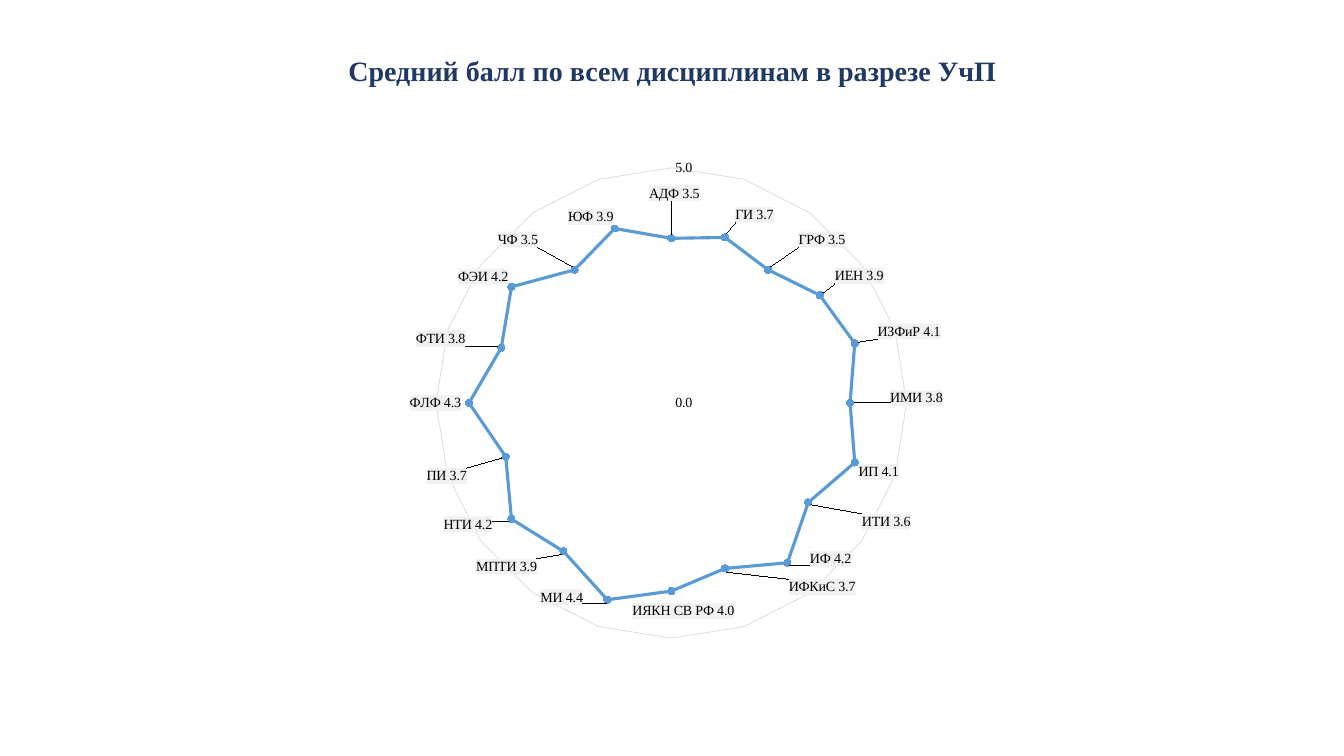
import copy
import pptx
import pptx.chart.data
import pptx.dml.color
import pptx.enum.chart
import pptx.enum.text
import pptx.oxml
import pptx.oxml.ns
import pptx.util
from pptx.util import Inches

TITLE = "Средний балл по всем дисциплинам в разрезе УчП"
FONT = "Times New Roman"
BLUE, NAVY, BLACK, GREY, PALE = "5B9BD5", "203864", "000000", "D9D9D9", "F2F2F2"

# unit, average mark, shift of its label in inches (None: left in place)
MARKS = [
    ("АДФ", 3.5, (0.03, -0.29)),
    ("ГИ", 3.7, (0.09, -0.11)),
    ("ГРФ", 3.5, (0.28, -0.19)),
    ("ИЕН", 3.9, (0.12, -0.09)),
    ("ИЗФиР", 4.1, (0.19, -0.03)),
    ("ИМИ", 3.8, (0.32, -0.05)),
    ("ИП", 4.1, None),
    ("ИТИ", 3.6, (0.5, 0.09)),
    ("ИФ", 4.2, (0.2, -0.15)),
    ("ИФКиС", 3.7, (0.62, 0.07)),
    ("ИЯКН СВ РФ", 4.0, (0.12, 0.04)),
    ("МИ", 4.4, (-0.23, -0.14)),
    ("МПТИ", 3.9, (-0.24, 0.04)),
    ("НТИ", 4.2, (-0.16, -0.05)),
    ("ПИ", 3.7, (-0.35, 0.1)),
    ("ФЛФ", 4.3, None),
    ("ФТИ", 3.8, (-0.32, 0)),
    ("ФЭИ", 4.2, None),
    ("ЧФ", 3.5, (-0.34, -0.19)),
    ("ЮФ", 3.9, None),
]
LEFT, WIDTH = 0.92, 11.5
TOP, HEIGHT = 1.1, 5.65
PLOT = {"x": 0.213, "y": 0.1, "w": 0.572, "h": 0.826}


def rgb(code):
    return pptx.dml.color.RGBColor.from_string(code)


def style(font, size, code, bold=False):
    font.name, font.size, font.bold = FONT, pptx.util.Pt(size), bold
    font.color.rgb = rgb(code)


def node(tag, body="", attrs=""):
    spaces = pptx.oxml.ns.nsdecls("c", "a")
    return pptx.oxml.parse_xml(f"<{tag} {spaces} {attrs}>{body}</{tag}>")


def layout(sizes, inner=False):
    """Manual layout; sizes are fractions of the chart."""
    body = '<c:layoutTarget val="inner"/>' if inner else ""
    if inner:
        body += '<c:xMode val="edge"/><c:yMode val="edge"/>'
    body += "".join(f'<c:{key} val="{val:.4f}"/>' for key, val in sizes.items())
    return node("c:layout", f"<c:manualLayout>{body}</c:manualLayout>")


def add_title(slide):
    box = slide.shapes.add_textbox(
        Inches(LEFT), Inches(0.34), Inches(WIDTH), Inches(0.76))
    frame = box.text_frame
    frame.word_wrap = True
    frame.vertical_anchor = pptx.enum.text.MSO_ANCHOR.MIDDLE
    para = frame.paragraphs[0]
    para.alignment = pptx.enum.text.PP_ALIGN.CENTER
    para.line_spacing = 0.9
    run = para.add_run()
    run.text = TITLE
    style(run.font, 20, NAVY, True)


def add_labels(series):
    labels = series.data_labels
    labels.show_value = labels.show_category_name = True
    labels.number_format, labels.number_format_is_linked = "0.0", False
    style(labels.font, 10, BLACK)
    root = labels._element
    fill = f'<a:solidFill><a:srgbClr val="{PALE}"/></a:solidFill>'
    root.find(pptx.oxml.ns.qn("c:txPr")).addprevious(
        node("c:spPr", fill + "<a:ln><a:noFill/></a:ln>"))
    gap = node("c:separator")
    gap.text = " "
    last = root.find(pptx.oxml.ns.qn("c:showBubbleSize"))
    last.addnext(gap)
    lead = pptx.oxml.ns.qn("c:showLeaderLines")
    shared = [part for part in root if part.tag != lead]
    first = root[0]
    for idx, (_, _, shift) in enumerate(MARKS):
        if shift is None:
            continue
        label = node("c:dLbl", f'<c:idx val="{idx}"/>')
        label.append(layout({"x": shift[0] / WIDTH, "y": shift[1] / HEIGHT}))
        for part in shared:
            label.append(copy.deepcopy(part))
        first.addprevious(label)


def add_radar(slide):
    kinds = pptx.enum.chart
    data = pptx.chart.data.CategoryChartData(number_format="0.0")
    data.categories = [name for name, _, _ in MARKS]
    data.add_series("Series 1", [mark for _, mark, _ in MARKS])
    chart = slide.shapes.add_chart(
        kinds.XL_CHART_TYPE.RADAR_MARKERS, Inches(LEFT), Inches(TOP),
        Inches(WIDTH), Inches(HEIGHT), data).chart
    chart.has_legend = chart.has_title = False
    style(chart.font, 10, BLACK)

    area = chart._chartSpace.chart.plotArea
    for old in area.findall(pptx.oxml.ns.qn("c:layout")):
        area.remove(old)
    area.insert(0, layout(PLOT, inner=True))

    chart.category_axis.has_major_gridlines = False
    chart.category_axis.visible = False
    axis = chart.value_axis
    axis.minimum_scale, axis.maximum_scale, axis.major_unit = 0, 5, 5
    axis.major_tick_mark = axis.minor_tick_mark = kinds.XL_TICK_MARK.NONE
    axis.tick_labels.number_format = "0.0"
    axis.tick_labels.number_format_is_linked = False
    style(axis.tick_labels.font, 10, BLACK)
    axis.format.line.fill.background()
    axis.has_major_gridlines = True
    grid = axis.major_gridlines.format.line
    grid.width, grid.color.rgb = pptx.util.Pt(0.5), rgb(GREY)

    series = chart.plots[0].series[0]
    series.smooth = False
    line = series.format.line
    line.width, line.color.rgb = pptx.util.Pt(2.25), rgb(BLUE)
    dot = series.marker
    dot.style, dot.size = kinds.XL_MARKER_STYLE.CIRCLE, 5
    dot.format.fill.solid()
    dot.format.fill.fore_color.rgb = rgb(BLUE)
    dot.format.line.color.rgb = rgb(BLUE)
    add_labels(series)


def main():
    deck = pptx.Presentation()
    deck.slide_width, deck.slide_height = Inches(13.33), Inches(7.5)
    slide = deck.slides.add_slide(deck.slide_layouts[6])
    add_radar(slide)
    add_title(slide)
    deck.save("out.pptx")


if __name__ == "__main__":
    main()
